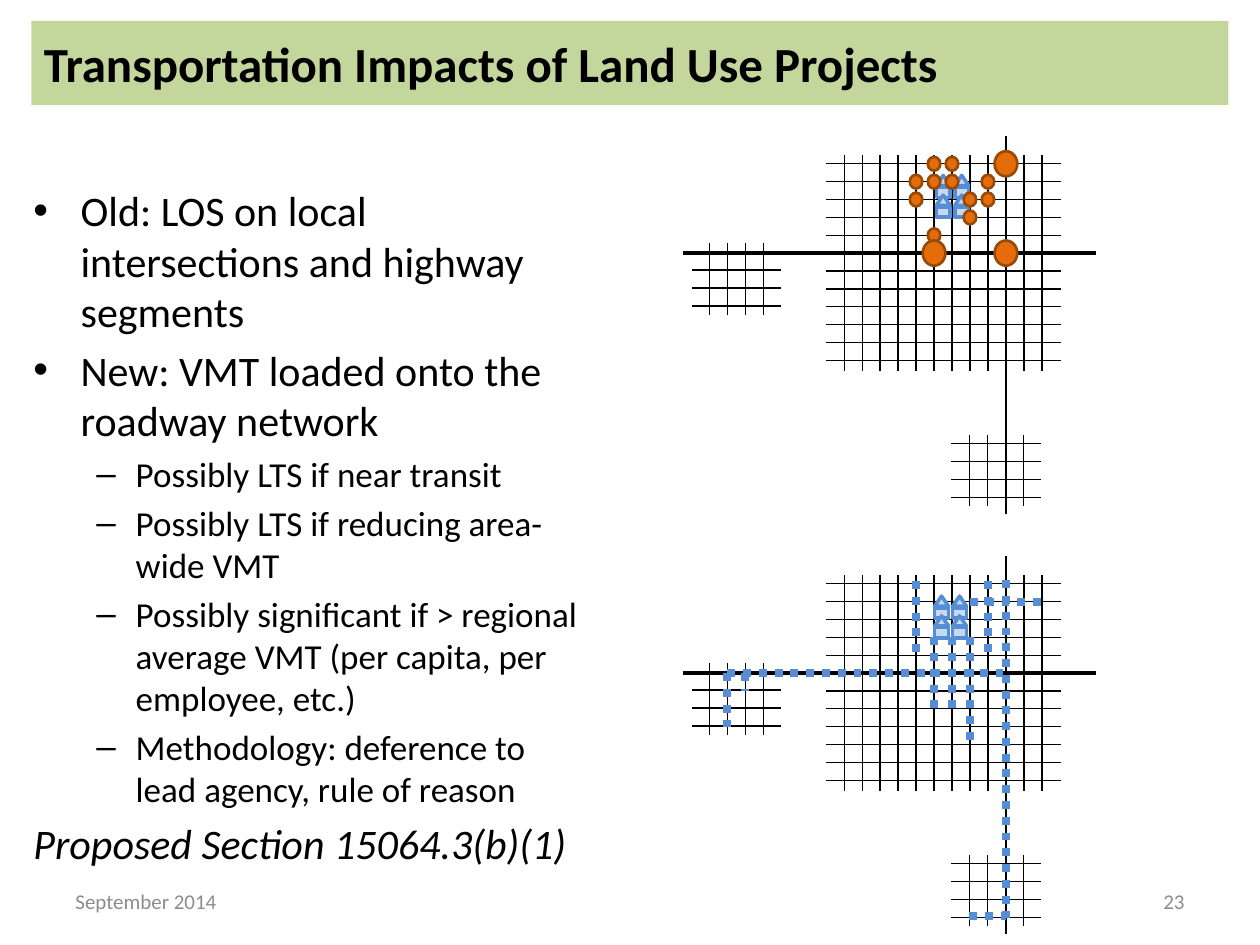
from itertools import product

from lxml.etree import SubElement
from pptx import Presentation
from pptx.dml.color import RGBColor
from pptx.enum.dml import MSO_LINE_DASH_STYLE as DASH
from pptx.enum.shapes import MSO_CONNECTOR as CONNECTOR, MSO_SHAPE as SHAPE
from pptx.enum.text import MSO_ANCHOR as ANCHOR, PP_ALIGN as ALIGN
from pptx.oxml.ns import qn
from pptx.util import Pt

COLORS = {
    "text": "000000", "footer": "8C8C8C", "banner": "C3D69B", "road": "000000",
    "house": "C6D9F1", "trip": "558ED5", "impact": "E46C0A", "impact_edge": "984807",
}
FONT = "Calibri"
GRID_LEFT, GRID_TOP = 482.4, 93.6
COL_GAP, ROW_GAP = 10.27, 10.21
COLS, ROWS = 12, 12
HIGHWAY_COL, HIGHWAY_ROW = 9, 5
MAP_SHIFT = 240

POINTS = [
    ("Old: LOS on local intersections and highway segments", 0),
    ("New: VMT loaded onto the roadway network", 0),
    ("Possibly LTS if near transit", 1),
    ("Possibly LTS if reducing area-wide VMT", 1),
    ("Possibly significant if > regional average VMT (per capita, per employee, etc.)", 1),
    ("Methodology: deference to lead agency, rule of reason", 1),
]
LEVELS = [("•", 24, 27, 27), ("–", 20, 58.5, 22.5)]

LOCAL_IMPACTS = [(7, 2), (6, 1), (8, 2), (4, 1), (8, 1), (5, 0),
                 (6, 0), (5, 4), (5, 1), (7, 3), (4, 2)]
HIGHWAY_IMPACTS = [(9, 5), (5, 5), (9, 0)]
TRIPS = [
    (7, 3, 7, 9), (5, 3, 5, 7), (4, -0.15, 4, 3.9), (8, -0.15, 8, 3.9),
    (6, 3, 6, 7.1), (9, -0.2, 9, 18.7), (7, 1, 11, 1), (6.95, 18.6, 9, 18.6),
    (-6.5, 5, 9, 5), (-6.5, 5, -6.5, 8), (-5.5, 5, -5.5, 6),
]


def rgb(name):
    return RGBColor.from_string(COLORS[name])


def style_text(paragraph, size, color="text", bold=False, italic=False):
    font = paragraph.font
    font.name, font.size = FONT, Pt(size)
    font.bold, font.italic = bold, italic
    font.color.rgb = rgb(color)


def add_bullet(paragraph, mark, margin, hanging):
    props = paragraph._p.get_or_add_pPr()
    props.set("marL", str(Pt(margin)))
    props.set("indent", str(-Pt(hanging)))
    SubElement(props, qn("a:buFont")).set("typeface", "Arial")
    SubElement(props, qn("a:buChar")).set("char", mark)


def add_label(slide, text, left, align):
    label = slide.shapes.add_textbox(Pt(left), Pt(500.4), Pt(168), Pt(28.8))
    frame = label.text_frame
    frame.word_wrap, frame.vertical_anchor = True, ANCHOR.MIDDLE
    paragraph = frame.paragraphs[0]
    paragraph.text, paragraph.alignment = text, align
    style_text(paragraph, 12, "footer")


def add_shape(shapes, kind, left, top, width, height, fill, edge=None, weight=0):
    shape = shapes.add_shape(kind, Pt(left), Pt(top), Pt(width), Pt(height))
    shape.shadow.inherit = False
    shape.fill.solid()
    shape.fill.fore_color.rgb = rgb(fill)
    if edge:
        shape.line.color.rgb = rgb(edge)
        shape.line.width = Pt(weight)
    else:
        shape.line.fill.background()
    return shape


def add_line(shapes, x1, y1, x2, y2, weight=0.75, color="road", dash=None):
    line = shapes.add_connector(CONNECTOR.STRAIGHT, Pt(x1), Pt(y1), Pt(x2), Pt(y2))
    line.line.color.rgb = rgb(color)
    line.line.width = Pt(weight)
    if dash:
        line.line.dash_style = dash
    SubElement(line._element.spPr, qn("a:effectLst"))


def add_title(slide, text):
    banner = add_shape(slide.shapes, SHAPE.RECTANGLE, 18, 12, 684, 48, "banner")
    frame = banner.text_frame
    frame.word_wrap, frame.vertical_anchor = True, ANCHOR.MIDDLE
    paragraph = frame.paragraphs[0]
    paragraph.text, paragraph.alignment = text, ALIGN.LEFT
    style_text(paragraph, 28, bold=True)


def add_body(slide):
    frame = slide.shapes.add_textbox(Pt(12), Pt(102), Pt(330), Pt(402)).text_frame
    frame.word_wrap = True
    for index, (text, level) in enumerate(POINTS):
        paragraph = frame.add_paragraph() if index else frame.paragraphs[0]
        mark, size, margin, hanging = LEVELS[level]
        paragraph.text, paragraph.level = text, level
        paragraph.space_before = Pt(size * 0.2 if index else 0)
        add_bullet(paragraph, mark, margin, hanging)
        style_text(paragraph, size)
    section = frame.add_paragraph()
    section.text = "Proposed Section 15064.3(b)(1)"
    section.space_before = Pt(4.8)
    style_text(section, 24, italic=True)


def grid_point(col, row, shift):
    return GRID_LEFT + col * COL_GAP, GRID_TOP + row * ROW_GAP + shift


def add_town(shapes, left, top):
    for street in range(4):
        x = left + (street + 1) * COL_GAP
        y = top + 5 + street * COL_GAP
        add_line(shapes, x, top, x, top + 41)
        add_line(shapes, left, y, left + 51.1, y)


def add_roads(shapes, shift):
    for col in range(COLS):
        x, _ = grid_point(col, 0, shift)
        if col == HIGHWAY_COL:
            add_line(shapes, x, 77.8 + shift, x, 293.8 + shift, 1.5)
        else:
            add_line(shapes, x, 88.6 + shift, x, 212 + shift)
    for row in range(ROWS):
        _, y = grid_point(0, row, shift)
        if row == HIGHWAY_ROW:
            add_line(shapes, 390.2, y, 626.4, y, 2.25)
        else:
            add_line(shapes, 472.3, y, 606.2, y)
    add_town(shapes, 543.6, 248.4 + shift)
    add_town(shapes, 395.3, 139 + shift)


def add_houses(shapes, left, top, gap):
    for row, col in product(range(2), repeat=2):
        x, y = left + col * gap, top + row * 11.3
        for kind, drop in ((SHAPE.RECTANGLE, 6.8), (SHAPE.ISOSCELES_TRIANGLE, 0)):
            add_shape(shapes, kind, x, y + drop, 7.9, 5.8, "house", "trip", 2)


def add_impacts(shapes, places, width, height):
    for col, row in places:
        x, y = grid_point(col, row, 0)
        add_shape(shapes, SHAPE.OVAL, x - width / 2, y - height / 2, width, height,
                  "impact", "impact_edge", 1.5)


def add_trips(shapes, shift):
    for col1, row1, col2, row2 in TRIPS:
        start, end = grid_point(col1, row1, shift), grid_point(col2, row2, shift)
        add_line(shapes, *start, *end, 4.5, "trip", DASH.ROUND_DOT)


def main():
    deck = Presentation()
    deck.slide_width, deck.slide_height = Pt(720), Pt(540)
    slide = deck.slides.add_slide(deck.slide_layouts[6])
    add_body(slide)
    add_label(slide, "September 2014", 36, ALIGN.LEFT)
    add_title(slide, "Transportation Impacts of Land Use Projects")

    old_map = slide.shapes.add_group_shape().shapes
    add_roads(old_map, 0)
    add_houses(old_map, 535, 100.2, 10.6)
    add_impacts(old_map, LOCAL_IMPACTS, 7.2, 7.9)
    add_impacts(old_map, HIGHWAY_IMPACTS, 13, 14.4)

    new_map = slide.shapes.add_group_shape().shapes
    add_roads(new_map, MAP_SHIFT)
    add_trips(new_map, MAP_SHIFT)
    add_houses(new_map, 534.1, 340.6, 10.3)

    add_label(slide, "23", 516, ALIGN.RIGHT)
    deck.save("out.pptx")


if __name__ == "__main__":
    main()
